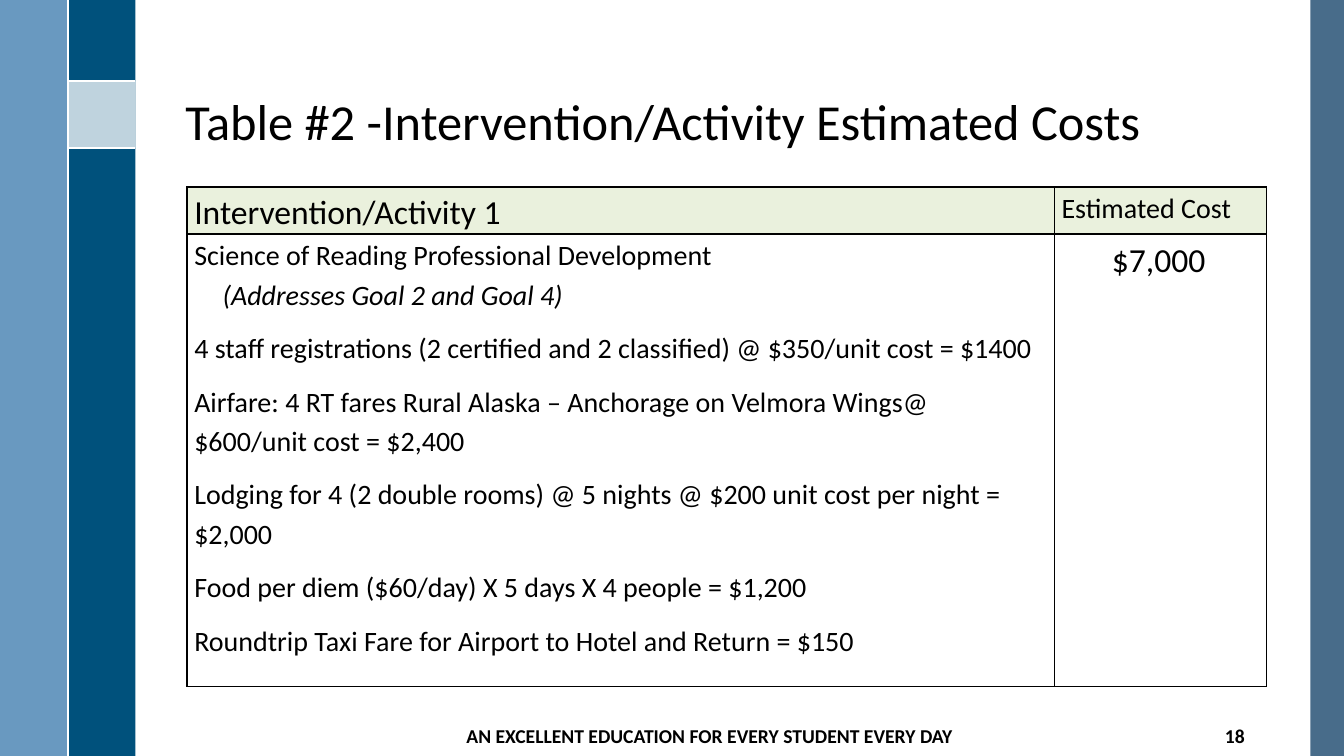
from lxml.etree import SubElement
from pptx import Presentation
from pptx.dml.color import RGBColor
from pptx.enum.shapes import MSO_CONNECTOR, MSO_SHAPE
from pptx.enum.text import MSO_ANCHOR, MSO_AUTO_SIZE, PP_ALIGN
from pptx.oxml import parse_xml
from pptx.oxml.ns import nsdecls, qn
from pptx.util import Pt

PX = 9525
FONT = "Calibri"
BLACK = RGBColor(0x00, 0x00, 0x00)
WHITE = RGBColor(0xFF, 0xFF, 0xFF)
SLATE = RGBColor(0x35, 0x5D, 0x7E)
NAVY = RGBColor(0x00, 0x51, 0x7C)
SKY = RGBColor(0x55, 0x8B, 0xB8)
PALE_GREEN = RGBColor(0xEA, 0xF1, 0xDD)

COST_LINES = [
    "Science of Reading Professional Development",
    "(Addresses Goal 2 and Goal 4)",
    "4 staff registrations (2 certified and 2 classified) @ $350/unit cost = $1400",
    "Airfare: 4 RT fares Rural Alaska – Anchorage on Velmora Wings@ $600/unit cost = $2,400",
    "Lodging for 4 (2 double rooms) @ 5 nights @ $200 unit cost per night = $2,000",
    "Food per diem ($60/day) X 5 days X 4 people = $1,200",
    "Roundtrip Taxi Fare for Airport to Hotel and Return = $150",
]


def px(*lengths):
    return [length * PX for length in lengths]


def set_font(paragraph, size, bold=False, italic=False):
    for run in paragraph.runs:
        font = run.font
        font.name, font.size = FONT, Pt(size)
        font.bold, font.italic = bold, italic
        font.color.rgb = BLACK


def add_band(slide, box, color, opacity=100):
    band = slide.shapes.add_shape(MSO_SHAPE.RECTANGLE, *px(*box))
    band.shadow.inherit = False
    band.line.fill.background()
    band.fill.solid()
    band.fill.fore_color.rgb = color
    if opacity < 100:
        color_element = band.fill._xPr.find(qn("a:solidFill"))[0]
        SubElement(color_element, qn("a:alpha")).set("val", str(opacity * 1000))


def add_rule(slide, ends):
    rule = slide.shapes.add_connector(MSO_CONNECTOR.STRAIGHT, *px(*ends))
    rule.line.color.rgb = WHITE
    rule.line.width = Pt(1.5)
    SubElement(rule._element.spPr, qn("a:effectLst"))


def set_title(slide, text):
    title = slide.shapes.title
    title.left, title.top, title.width, title.height = px(167, 18, 1027, 131)
    text_frame = title.text_frame
    text_frame.text = text
    text_frame.word_wrap = True
    text_frame.auto_size = MSO_AUTO_SIZE.NONE
    text_frame.vertical_anchor = MSO_ANCHOR.BOTTOM
    paragraph = text_frame.paragraphs[0]
    paragraph.alignment = PP_ALIGN.LEFT
    paragraph.line_spacing = 0.9
    set_font(paragraph, 36)


def add_footer(slide, box, text, alignment):
    text_frame = slide.shapes.add_textbox(*px(*box)).text_frame
    text_frame.text = text
    text_frame.word_wrap = True
    text_frame.vertical_anchor = MSO_ANCHOR.MIDDLE
    text_frame.paragraphs[0].alignment = alignment
    set_font(text_frame.paragraphs[0], 14, bold=True)


def set_borders(cell):
    properties = cell._tc.get_or_add_tcPr()
    for index, side in enumerate(("lnL", "lnR", "lnT", "lnB")):
        properties.insert(index, parse_xml(
            f'<a:{side} {nsdecls("a")} w="12700"><a:solidFill>'
            f'<a:srgbClr val="{BLACK}"/></a:solidFill></a:{side}>'))


def fill_cell(cell, lines, size, color=None, space_after=10):
    cell.margin_left, cell.margin_right = px(7, 7)
    cell.margin_top = cell.margin_bottom = 0
    if color is None:
        cell.fill.background()
    else:
        cell.fill.solid()
        cell.fill.fore_color.rgb = color
    set_borders(cell)
    cell.text_frame.text = "\n".join(lines)
    for paragraph in cell.text_frame.paragraphs:
        paragraph.line_spacing = 1.15
        paragraph.space_after = Pt(space_after)
        set_font(paragraph, size)


def indent(paragraph, margin):
    paragraph._p.get_or_add_pPr().set("marL", str(margin * PX))


def add_cost_table(slide):
    table = slide.shapes.add_table(2, 2, *px(178, 178, 1028, 474)).table
    table.first_row = table.horz_banding = False
    for column, width in zip(table.columns, px(826, 202)):
        column.width = width
    for row, height in zip(table.rows, px(43, 431)):
        row.height = height
    fill_cell(table.cell(0, 0), ["Intervention/Activity 1"], 24, PALE_GREEN)
    fill_cell(table.cell(0, 1), ["Estimated Cost"], 20, PALE_GREEN, space_after=0)
    details, total = table.cell(1, 0), table.cell(1, 1)
    fill_cell(details, COST_LINES, 20)
    heading, goals = details.text_frame.paragraphs[:2]
    heading.space_after = Pt(0)
    indent(goals, 27)
    set_font(goals, 20, italic=True)
    fill_cell(total, ["$7,000"], 24)
    indent(total.text_frame.paragraphs[0], 48)


def main():
    presentation = Presentation()
    presentation.slide_width, presentation.slide_height = px(1280, 720)
    slide = presentation.slides.add_slide(presentation.slide_layouts[5])
    add_band(slide, (1248, 0, 32, 720), SLATE, 90)
    add_band(slide, (65, 0, 64, 720), NAVY)
    add_band(slide, (0, 0, 64, 720), SKY, 88)
    add_band(slide, (65, 77, 64, 64), WHITE, 75)
    for ends in ((65, 77, 129, 77), (65, 141, 129, 141), (65, 0, 65, 720)):
        add_rule(slide, ends)
    set_title(slide, "Table #2 -Intervention/Activity Estimated Costs")
    add_cost_table(slide)
    add_footer(slide, (432, 682, 488, 38),
               "AN EXCELLENT EDUCATION FOR EVERY STUDENT EVERY DAY", PP_ALIGN.CENTER)
    add_footer(slide, (1131, 682, 64, 38), "18", PP_ALIGN.RIGHT)
    presentation.save("out.pptx")


if __name__ == "__main__":
    main()
